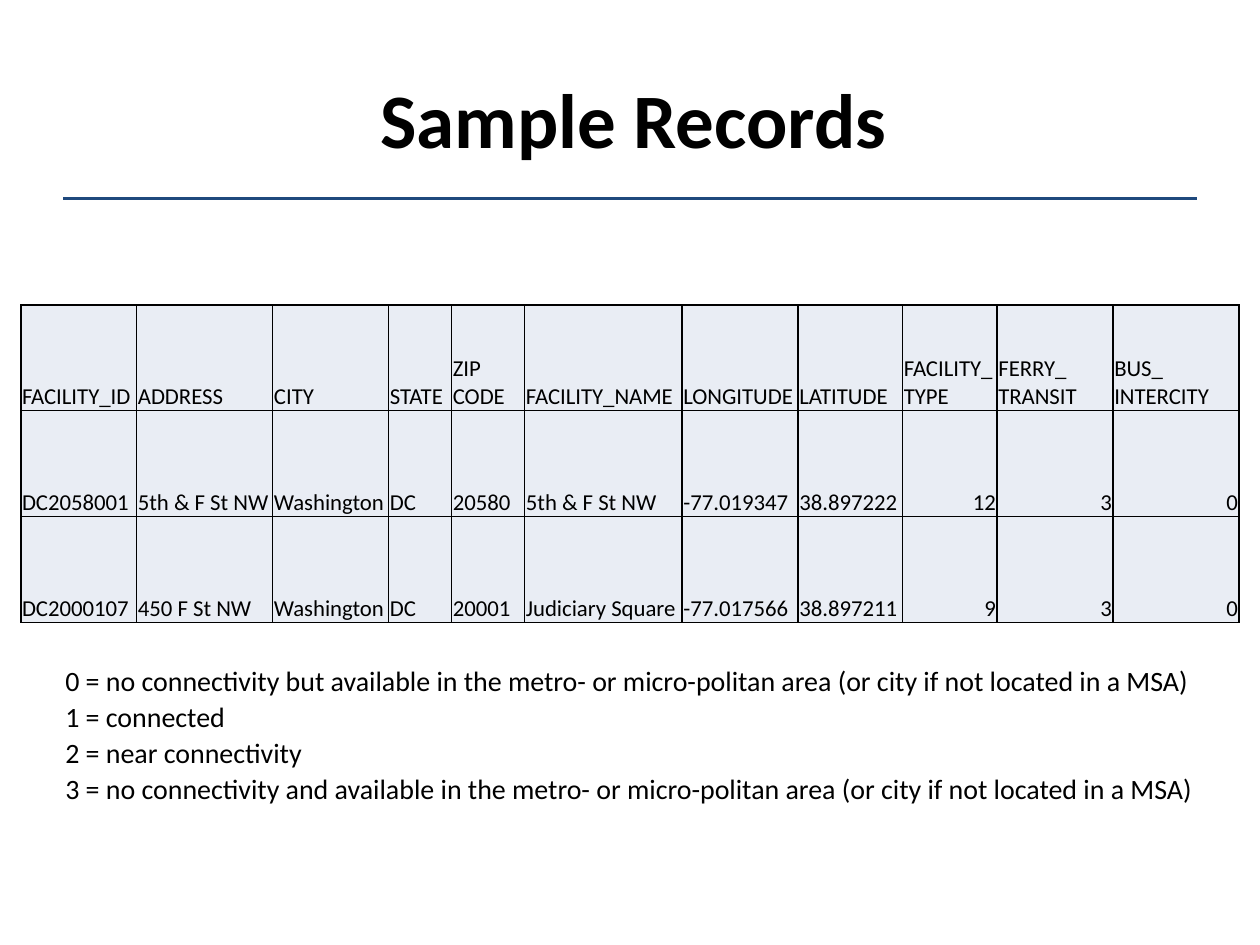
from lxml.etree import SubElement as Sub
from pptx import Presentation
from pptx.dml.color import RGBColor as Rgb
from pptx.enum.shapes import MSO_CONNECTOR as Conn
from pptx.enum.text import MSO_ANCHOR as Anchor, PP_ALIGN as Align
from pptx.oxml.ns import qn
from pptx.util import Inches as In, Pt

WIDE, HIGH = 10, 7.5
FONT = "Calibri"
HUES = {"ink": "000000", "rule": "1F497D", "cell": "E9EDF4"}
COLS = [0.92, 1.08, 0.92, 0.5, 0.58, 1.25, 0.92, 0.83, 0.75, 0.92, 1]
ROW = 0.84
HEAD = ["FACILITY_ID", "ADDRESS", "CITY", "STATE", "ZIP CODE",
        "FACILITY_NAME", "LONGITUDE", "LATITUDE", "FACILITY_TYPE",
        "FERRY_ TRANSIT", "BUS_ INTERCITY"]
DATA = [
    ["DC2058001", "5th & F St NW", "Washington", "DC", "20580",
     "5th & F St NW", "-77.019347", "38.897222", 12, 3, 0],
    ["DC2000107", "450 F St NW", "Washington", "DC", "20001",
     "Judiciary Square", "-77.017566", "38.897211", 9, 3, 0],
]
CODES = [
    "0 = no connectivity but available in the metro- or micro-politan area (or city if not located in a MSA)",
    "1 = connected",
    "2 = near connectivity",
    "3 = no connectivity and available in the metro- or micro-politan area (or city if not located in a MSA)",
]


def hue(name):
    return Rgb.from_string(HUES[name])


def write(frame, lines, size, bold=False, align=Align.LEFT, lead=None, gap=0):
    """Fill a text frame, one paragraph a line, with gap points between."""
    frame.word_wrap = True
    for i, line in enumerate(lines):
        para = frame.add_paragraph() if i else frame.paragraphs[0]
        para.alignment = align
        if lead:
            para.line_spacing = lead
        if i and gap:
            para.space_before = Pt(gap)
        run = para.add_run()
        run.text = line
        font = run.font
        font.name, font.size, font.bold = FONT, Pt(size), bold
        font.color.rgb = hue("ink")


def add_text(slide, box, lines, size, anchor=Anchor.TOP, **form):
    frame = slide.shapes.add_textbox(*map(In, box)).text_frame
    frame.vertical_anchor = anchor
    write(frame, lines, size, **form)


def add_rule(slide, left, right, y):
    rule = slide.shapes.add_connector(
        Conn.STRAIGHT, In(left), In(y), In(right), In(y))
    rule.line.color.rgb = hue("rule")
    rule.line.width = Pt(2)
    Sub(rule._element.spPr, qn("a:effectLst"))


def frame_cell(cell):
    """Draw a thin line on all four sides of a cell."""
    props = cell._tc.get_or_add_tcPr()
    for side in "LRTB":
        line = Sub(props, qn(f"a:ln{side}"), w=str(Pt(1)))
        fill = Sub(line, qn("a:solidFill"))
        Sub(fill, qn("a:srgbClr"), val=HUES["ink"])


def fill_cell(cell, value):
    frame_cell(cell)
    cell.fill.solid()
    cell.fill.fore_color.rgb = hue("cell")
    cell.vertical_anchor = Anchor.BOTTOM
    cell.margin_left = cell.margin_right = cell.margin_top = In(0.01)
    cell.margin_bottom = 0
    align = Align.RIGHT if isinstance(value, int) else Align.LEFT
    write(cell.text_frame, [str(value)], 13, align=align)


def add_grid(slide, top, rows):
    wide = sum(COLS)
    table = slide.shapes.add_table(
        len(rows), len(COLS), In((WIDE - wide) / 2), In(top),
        In(wide), In(ROW * len(rows))).table
    table.first_row = table.horz_banding = False
    for col, size in zip(table.columns, COLS):
        col.width = In(size)
    for r, row in enumerate(rows):
        table.rows[r].height = In(ROW)
        for c, value in enumerate(row):
            fill_cell(table.cell(r, c), value)


def main():
    deck = Presentation()
    deck.slide_width, deck.slide_height = In(WIDE), In(HIGH)
    slide = deck.slides.add_slide(deck.slide_layouts[6])
    add_rule(slide, 0.05 * WIDE, 0.95 * WIDE, 0.21 * HIGH)
    add_text(slide, (0.53, 0.31, 0.9 * WIDE, 1.25), ["Sample Records"], 44,
             anchor=Anchor.MIDDLE, bold=True, align=Align.CENTER)
    add_grid(slide, 2.42, [HEAD] + DATA)
    add_text(slide, (0.42, 0.7 * HIGH, 9.24, 1.67), CODES, 16,
             lead=0.9, gap=3.2)
    deck.save("out.pptx")


if __name__ == "__main__":
    main()
